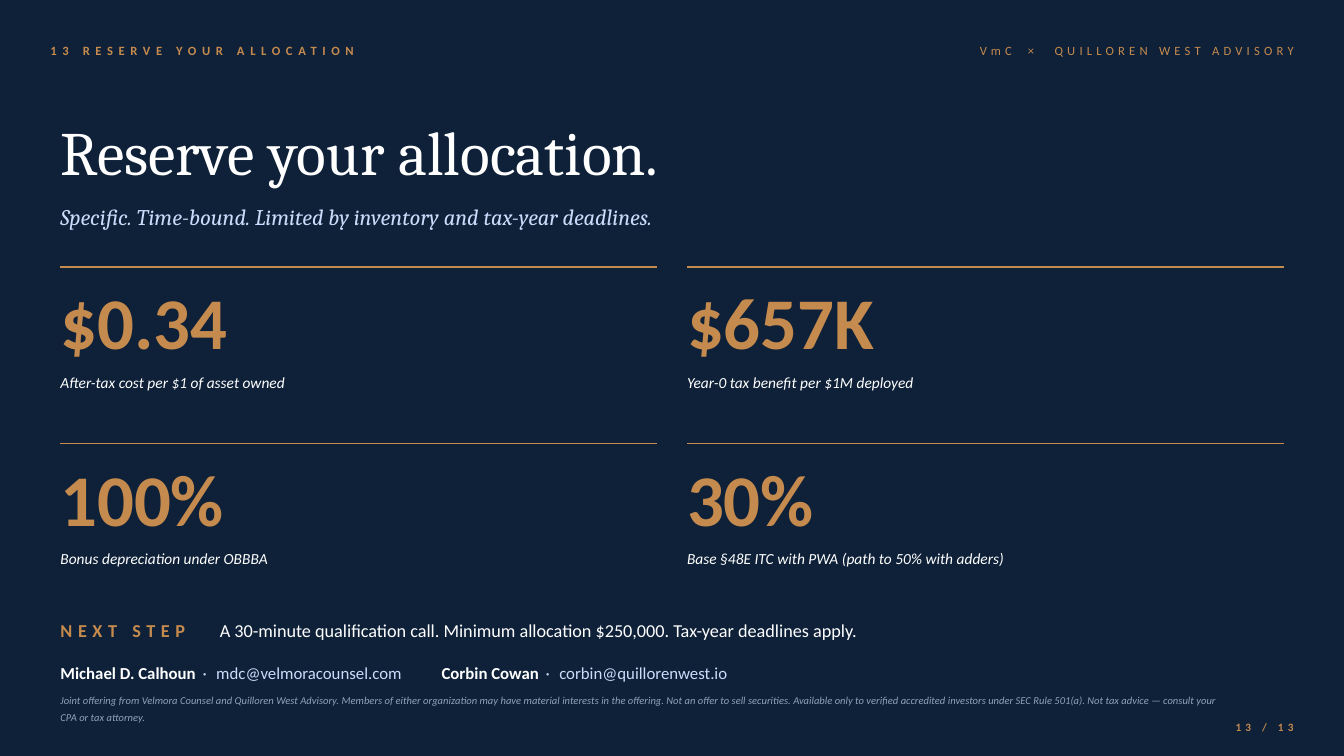
from dataclasses import dataclass

from lxml import etree
from pptx import Presentation
from pptx.dml.color import RGBColor
from pptx.enum.shapes import MSO_CONNECTOR
from pptx.enum.text import MSO_ANCHOR, PP_ALIGN
from pptx.oxml.ns import qn
from pptx.util import Inches, Pt

TOP, MID = MSO_ANCHOR.TOP, MSO_ANCHOR.MIDDLE
LEFT, RIGHT = PP_ALIGN.LEFT, PP_ALIGN.RIGHT
LINE = MSO_CONNECTOR.STRAIGHT

NAVY, GOLD, WHITE = "0E2138", "C58A4E", "FFFFFF"
ICE, GREY = "CADCFC", "8FA3B8"
SANS, SERIF = "Calibri", "Cambria"

EDGE, WIDE = 0.6, 12.13
GAP = 0.3
COL = (WIDE - GAP) / 2
ROW_TOP, ROW_STEP = 2.65, 1.75


@dataclass
class Span:
    text: str
    size: float
    color: str
    bold: bool = False
    slant: bool = False
    font: str = SANS
    track: float = 0


@dataclass
class Box:
    left: float
    top: float
    width: float
    height: float
    spans: list[Span]
    anchor: MSO_ANCHOR = MID
    align: PP_ALIGN = LEFT
    tab: float = 0
    lead: float = 0


@dataclass
class Stat:
    value: str
    label: str


def rgb(color: str) -> RGBColor:
    return RGBColor.from_string(color)


def draw_box(slide, box: Box) -> None:
    shape = slide.shapes.add_textbox(
        Inches(box.left), Inches(box.top), Inches(box.width), Inches(box.height))
    frame = shape.text_frame
    frame.word_wrap = True
    frame.vertical_anchor = box.anchor
    frame.margin_left = frame.margin_right = 0
    frame.margin_top = frame.margin_bottom = 0
    para = frame.paragraphs[0]
    para.alignment = box.align
    if box.lead:
        para.line_spacing = box.lead
    if box.tab:
        stops = etree.SubElement(para._p.get_or_add_pPr(), qn("a:tabLst"))
        etree.SubElement(stops, qn("a:tab"), pos=str(Inches(box.tab)), algn="l")
    for span in box.spans:
        run = para.add_run()
        run.text = span.text
        font = run.font
        font.name, font.size = span.font, Pt(span.size)
        font.bold, font.italic = span.bold, span.slant
        font.color.rgb = rgb(span.color)
        if span.track:
            run._r.get_or_add_rPr().set("spc", str(round(span.track * 100)))


def draw_rule(slide, left: float, top: float) -> None:
    rule = slide.shapes.add_connector(
        LINE, Inches(left), Inches(top), Inches(left + COL), Inches(top))
    rule.line.color.rgb = rgb(GOLD)
    rule.line.width = Pt(1)
    etree.SubElement(rule._element.spPr, qn("a:effectLst"))


def draw_stat(slide, stat: Stat, left: float, top: float) -> None:
    draw_rule(slide, left, top)
    draw_box(slide, Box(left, top + 0.1, COL, 0.95,
                        [Span(stat.value, 52, GOLD, bold=True)], TOP))
    draw_box(slide, Box(left, top + 1.05, COL, 0.4,
                        [Span(stat.label, 11, WHITE, slant=True)], TOP))


STATS = [
    Stat("$0.34", "After-tax cost per $1 of asset owned"),
    Stat("$657K", "Year-0 tax benefit per $1M deployed"),
    Stat("100%", "Bonus depreciation under OBBBA"),
    Stat("30%", "Base §48E ITC with PWA (path to 50% with adders)"),
]

HEAD = [
    Box(0.5, 0.35, 7.5, 0.3,
        [Span("13 RESERVE YOUR ALLOCATION", 9, GOLD, bold=True, track=4)]),
    Box(7.5, 0.35, 5.33, 0.3,
        [Span("VmC", 9, GOLD, track=3),
         Span(" × ", 9, GOLD, track=6.3),
         Span("QUILLOREN WEST ADVISORY", 9, GOLD, track=3)], align=RIGHT),
    Box(EDGE, 1.05, WIDE, 0.9,
        [Span("Reserve your allocation.", 44, WHITE, font=SERIF)]),
    Box(EDGE, 1.95, WIDE, 0.4,
        [Span("Specific. Time-bound. Limited by inventory and tax-year deadlines.",
              16, ICE, slant=True, font=SERIF)]),
]

DOT = Span(" · ", 12, ICE, track=2)
FOOT = [
    Box(EDGE, 6.05, WIDE, 0.4,
        [Span("NEXT STEP\t", 13, GOLD, bold=True, track=4),
         Span("A 30-minute qualification call. Minimum allocation $250,000. "
              "Tax-year deadlines apply.", 13, WHITE)], tab=1.58),
    Box(EDGE, 6.5, WIDE, 0.35,
        [Span("Michael D. Calhoun", 12, WHITE, bold=True), DOT,
         Span("mdc@velmoracounsel.com\t", 12, ICE),
         Span("Corbin Cowan", 12, WHITE, bold=True), DOT,
         Span("corbin@quillorenwest.io", 12, ICE)], tab=3.78),
    Box(EDGE, 6.85, 11.63, 0.5,
        [Span("Joint offering from Velmora Counsel and Quilloren West Advisory. "
              "Members of either organization may have material interests in the "
              "offering. Not an offer to sell securities. Available only to "
              "verified accredited investors under SEC Rule 501(a). Not tax "
              "advice — consult your CPA or tax attorney.",
              7.5, GREY, slant=True)], TOP, lead=1.3),
    Box(11.93, 7.1, 0.9, 0.22,
        [Span("13 / 13", 8, GOLD, bold=True, track=3)], align=RIGHT),
]


def main() -> None:
    deck = Presentation()
    deck.slide_width, deck.slide_height = Inches(13.33), Inches(7.5)
    slide = deck.slides.add_slide(deck.slide_layouts[6])
    fill = slide.background.fill
    fill.solid()
    fill.fore_color.rgb = rgb(NAVY)

    # Header and title
    for box in HEAD:
        draw_box(slide, box)

    # Two by two grid of figures
    for i, stat in enumerate(STATS):
        row, col = divmod(i, 2)
        draw_stat(slide, stat, EDGE + col * (COL + GAP), ROW_TOP + row * ROW_STEP)

    # Next step, contacts and small print
    for box in FOOT:
        draw_box(slide, box)

    deck.save("out.pptx")


if __name__ == "__main__":
    main()
